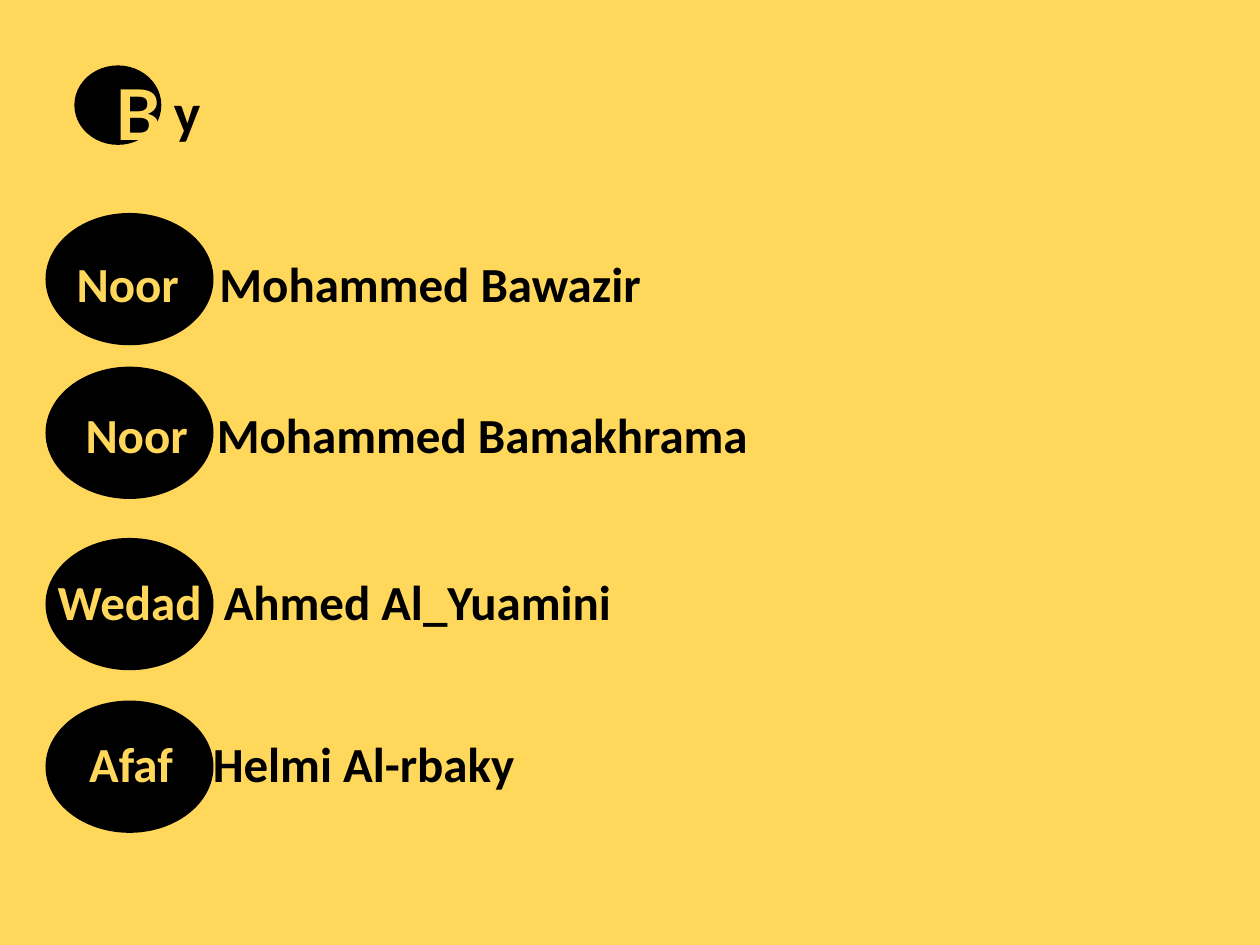
"""Build the slide that lists the four authors."""
from dataclasses import dataclass

from lxml.etree import SubElement
from pptx import Presentation
from pptx.dml.color import RGBColor
from pptx.enum.shapes import MSO_SHAPE as SHAPE
from pptx.enum.text import MSO_ANCHOR as ANCHOR, MSO_AUTO_SIZE as AUTO, PP_ALIGN as ALIGN
from pptx.oxml.ns import qn
from pptx.util import Pt

YELLOW, BLACK = "FFD85B", "000000"
INSET = 7.2


@dataclass
class Author:
    first: str
    rest: str
    oval_top: float
    text_left: float
    text_top: float
    rest_left: float


AUTHORS = [
    Author("Noor", "Mohammed Bawazir", 121.7, 36.7, 141.1, 125.5),
    Author("Noor", "Mohammed Bamakhrama", 209.5, 41.8, 227.5, 124),
    Author("Wedad", "Ahmed Al_Yuamini", 307.4, 25.9, 323.3, 128),
    Author("Afaf", "Helmi Al-rbaky", 400.3, 43.9, 415.4, 121.7),
]


def rgb(color: str) -> RGBColor:
    """Turn a hex string into a colour."""
    return RGBColor.from_string(color)


def add_run(p, text: str, *, size: float = 28, font: str = "Calibri", color: str = BLACK) -> None:
    """Append a bold run to a paragraph."""
    r = p.add_run()
    r.text = text
    r.font.size, r.font.name, r.font.bold = Pt(size), font, True
    r.font.color.rgb = rgb(color)


def add_oval(s, left: float, top: float, width: float, height: float) -> None:
    """Draw a plain black oval."""
    sp = s.shapes.add_shape(SHAPE.OVAL, Pt(left), Pt(top), Pt(width), Pt(height))
    sp.shadow.inherit = False
    sp.fill.solid()
    sp.fill.fore_color.rgb = rgb(BLACK)
    sp.line.fill.background()


def add_box(s, left: float, top: float, width: float, height: float, wrap: bool = True):
    """Add a text box and return its first paragraph."""
    tf = s.shapes.add_textbox(Pt(left), Pt(top), Pt(width), Pt(height)).text_frame
    tf.word_wrap = wrap
    return tf.paragraphs[0]


def add_tab(p, pos: float) -> None:
    """Set one left tab stop on a paragraph."""
    tabs = SubElement(p._p.get_or_add_pPr(), qn("a:tabLst"))
    SubElement(tabs, qn("a:tab"), pos=str(int(Pt(pos))), algn="l")


def add_heading(s) -> None:
    """Set the heading with its initial on an oval."""
    add_oval(s, 42.5, 37.4, 49.7, 45.4)
    title = s.shapes.title
    title.element.getparent().append(title.element)
    title.left, title.top, title.width, title.height = Pt(59), Pt(36.7), Pt(85), Pt(55.4)
    tf = title.text_frame
    tf.auto_size, tf.vertical_anchor, tf.word_wrap = AUTO.NONE, ANCHOR.TOP, True
    p = tf.paragraphs[0]
    p.alignment = ALIGN.LEFT
    add_run(p, "B", size=40, font="Lato", color=YELLOW)
    add_run(add_box(s, 92.2, 41, 29.5, 46, wrap=False), "y", size=32)


def add_author(s, author: Author) -> None:
    """Write one author over the oval, with the surname at a tab stop."""
    p = add_box(s, author.text_left, author.text_top, 438, 41)
    add_tab(p, author.rest_left - author.text_left - INSET)
    add_run(p, f"{author.first}\t", color=YELLOW)
    add_run(p, author.rest)


def main() -> None:
    """Build and save the presentation."""
    prs = Presentation()
    prs.slide_width, prs.slide_height = Pt(720), Pt(540)
    s = prs.slides.add_slide(prs.slide_layouts[5])
    s.background.fill.solid()
    s.background.fill.fore_color.rgb = rgb(YELLOW)
    add_heading(s)
    for author in AUTHORS:
        add_oval(s, 26, author.oval_top, 96, 75.6)
    for author in AUTHORS:
        add_author(s, author)
    prs.save("out.pptx")


if __name__ == "__main__":
    main()
